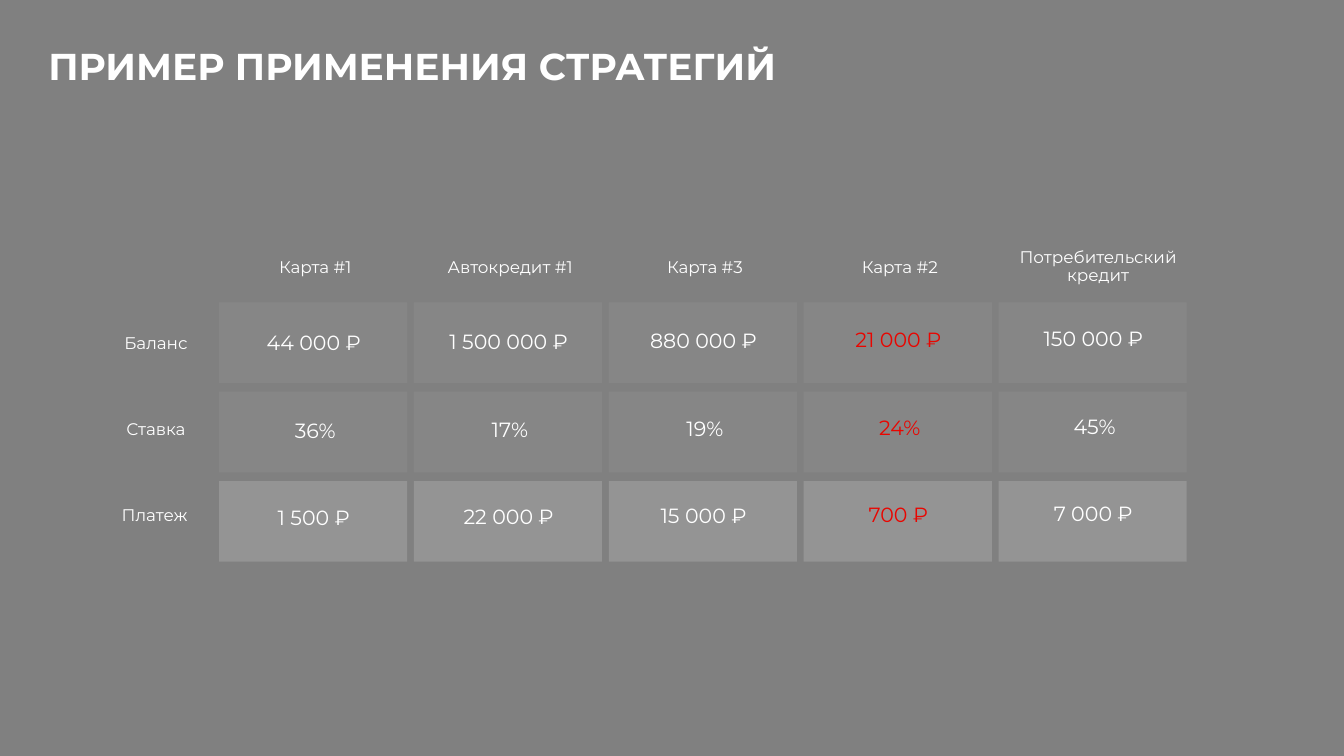
from typing import NamedTuple

from lxml import etree
from pptx import Presentation
from pptx.dml.color import RGBColor
from pptx.enum.shapes import MSO_SHAPE
from pptx.enum.text import MSO_ANCHOR, MSO_AUTO_SIZE, PP_ALIGN
from pptx.oxml.ns import qn
from pptx.util import Inches, Pt

RECT = MSO_SHAPE.RECTANGLE
LEFT, CENTER = PP_ALIGN.LEFT, PP_ALIGN.CENTER
BOTTOM = MSO_ANCHOR.BOTTOM
GROW = MSO_AUTO_SIZE.SHAPE_TO_FIT_TEXT

FONT = "Montserrat"
COLORS = {"back": "808080", "cell": "D9D9D9", "text": "FFFFFF", "accent": "E90500"}

# Grid in inches
SLIDE_W = 10
SLIDE_H = SLIDE_W * 9 / 16
GRID_LEFT, GRID_TOP = 1.63, 2.25
COL_STEP, ROW_STEP = 1.45, 1.33 / 2
CELL_W, CELL_H = 1.4, 0.6
TEXT_W, TEXT_H = 1.41, 0.35
VALUE_RISE = 0.03 / 4  # values climb slightly from column to column


class Column(NamedTuple):
    name: str
    color: str = "text"
    left_shift: float = 0.01
    top: float = 1.88
    width: float = TEXT_W


class Row(NamedTuple):
    name: str
    label_left: float
    label_top: float
    value_top: float
    value_shift: float
    alpha: int
    values: tuple[str, ...]


COLUMNS = (
    Column("Карта #1"),
    Column("Автокредит #1"),
    Column("Карта #3"),
    Column("Карта #2", color="accent"),
    Column("Потребительский кредит", left_shift=-0.07, top=1.8, width=1.62),
)
ROWS = (
    Row("Баланс", 0.7, 2.44, 2.43, 0, 8,
        ("44 000 ₽", "1 500 000 ₽", "880 000 ₽", "21 000 ₽", "150 000 ₽")),
    Row("Ставка", 0.7, 3.08, 3.08, 0.01, 8, ("36%", "17%", "19%", "24%", "45%")),
    Row("Платеж", 0.69, 3.72, 3.73, 0, 23,
        ("1 500 ₽", "22 000 ₽", "15 000 ₽", "700 ₽", "7 000 ₽")),
)


def write(tf, text: str, size: float, color: str, align, spacing: float,
          bold: bool = False) -> None:
    p = tf.paragraphs[0]
    p.alignment = align
    p.line_spacing = spacing
    p.space_before = Pt(0)
    r = p.add_run()
    r.text = text
    r.font.name = FONT
    r.font.size = Pt(size)
    r.font.bold = bold
    r.font.color.rgb = RGBColor.from_string(COLORS[color])


def add_text(s, text: str, left: float, top: float, width: float, size: float,
             color: str = "text") -> None:
    box = s.shapes.add_textbox(Inches(left), Inches(top), Inches(width), Inches(TEXT_H))
    tf = box.text_frame
    tf.word_wrap = True
    write(tf, text, size, color, CENTER, 0.9)


def add_rect(s, left: float, top: float, width: float, height: float, color: str,
             alpha: int = 100):
    sp = s.shapes.add_shape(RECT, Inches(left), Inches(top), Inches(width), Inches(height))
    sp.shadow.inherit = False
    sp.line.fill.background()
    sp.fill.solid()
    sp.fill.fore_color.rgb = RGBColor.from_string(COLORS[color])
    if alpha < 100:
        clr = sp.element.spPr.find(f"{qn('a:solidFill')}/{qn('a:srgbClr')}")
        etree.SubElement(clr, qn("a:alpha"), val=str(alpha * 1000))
    return sp


def add_title(s, text: str) -> None:
    title = s.shapes.title
    title.left, title.top = Inches(0.36), Inches(0.39)
    title.width, title.height = Inches(9.29), Inches(0.26)
    tf = title.text_frame
    tf.margin_left = tf.margin_right = tf.margin_top = tf.margin_bottom = 0
    tf.vertical_anchor = BOTTOM
    tf.word_wrap = True
    tf.auto_size = GROW
    write(tf, text, 20, "text", LEFT, 0.75, bold=True)


def main() -> None:
    prs = Presentation()
    prs.slide_width, prs.slide_height = Inches(SLIDE_W), Inches(SLIDE_H)
    s = prs.slides.add_slide(prs.slide_layouts[5])

    # Backdrop goes behind the title
    backdrop = add_rect(s, 0, 0, SLIDE_W, SLIDE_H, "back")
    s.shapes.title.element.addprevious(backdrop.element)
    add_title(s, "ПРИМЕР ПРИМЕНЕНИЯ СТРАТЕГИЙ")

    # Column headings
    lefts = [GRID_LEFT + i * COL_STEP for i in range(len(COLUMNS))]
    for left, col in zip(lefts, COLUMNS):
        add_text(s, col.name, left + col.left_shift, col.top, col.width, 9)

    # Row labels, cells and values
    for j, row in enumerate(ROWS):
        add_text(s, row.name, row.label_left, row.label_top, 0.92, 9)
        for i, (left, col, value) in enumerate(zip(lefts, COLUMNS, row.values)):
            add_rect(s, left, GRID_TOP + j * ROW_STEP, CELL_W, CELL_H, "cell", row.alpha)
            add_text(s, value, left + row.value_shift, row.value_top - i * VALUE_RISE,
                     TEXT_W, 11, col.color)

    prs.save("out.pptx")


if __name__ == "__main__":
    main()
